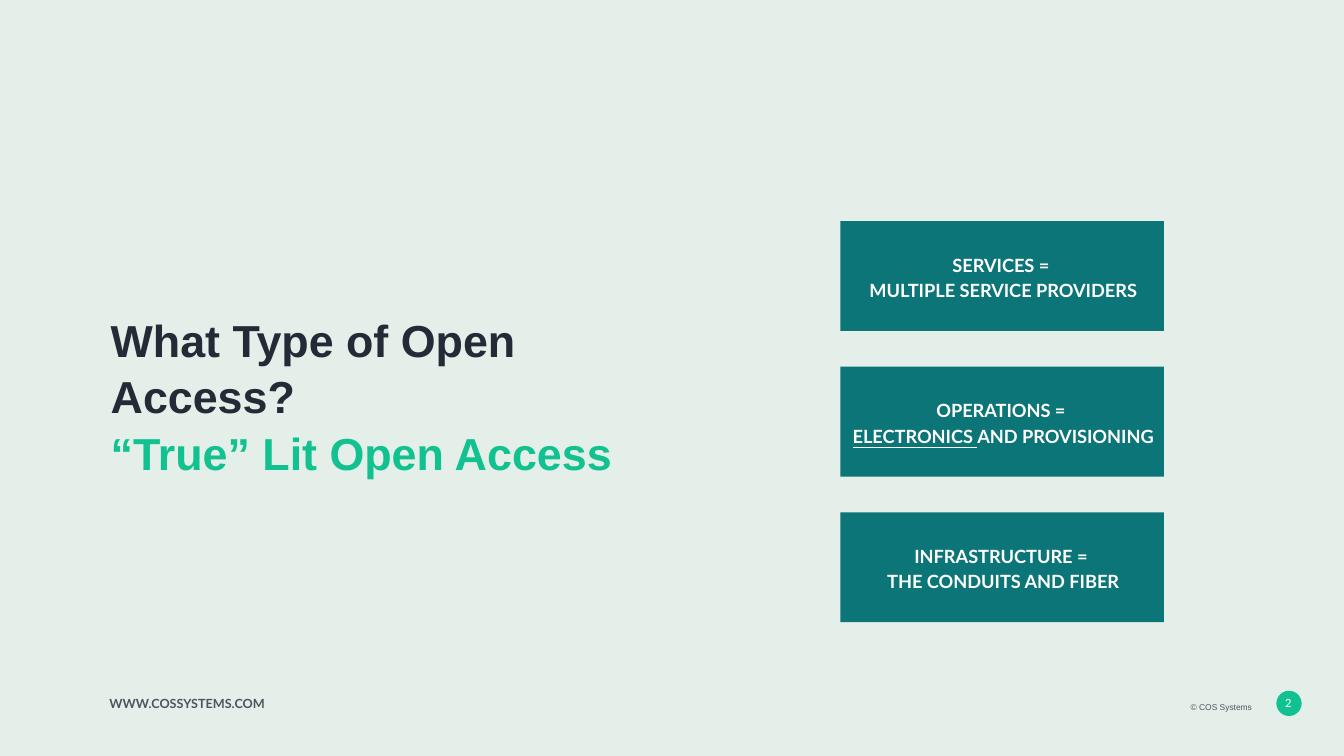
from pptx import Presentation
from pptx.dml.color import RGBColor
from pptx.enum.shapes import MSO_SHAPE as Shape
from pptx.enum.text import MSO_ANCHOR as Anchor, PP_ALIGN as Align
from pptx.util import Cm, Pt

MINT = RGBColor(0xE4, 0xEF, 0xE9)
GREEN = RGBColor(0x11, 0xC1, 0x8F)
TEAL = RGBColor(0x0C, 0x75, 0x77)
NAVY = RGBColor(0x24, 0x2A, 0x36)
GREY = RGBColor(0x4D, 0x54, 0x60)
WHITE = RGBColor(0xFF, 0xFF, 0xFF)

LAYER_LEFT, LAYER_TOP, LAYER_STEP = 21.18, 5.57, 3.67
LAYERS = [
    ("SERVICES = ", [("MULTIPLE SERVICE PROVIDERS", False)]),
    ("OPERATIONS = ", [("ELECTRONICS ", True), ("AND PROVISIONING", False)]),
    ("INFRASTRUCTURE = ", [("THE CONDUITS AND FIBER", False)]),
]


def style(paragraph, font_name, size, color, bold=False, align=Align.LEFT, spacing=1.0):
    paragraph.alignment = align
    paragraph.line_spacing = spacing
    font = paragraph.font
    font.name, font.size, font.bold = font_name, Pt(size), bold
    font.color.rgb = color


def add_text(slide, box, text, *font, anchor=Anchor.TOP, **options):
    frame = slide.shapes.add_textbox(*map(Cm, box)).text_frame
    frame.word_wrap = True
    frame.vertical_anchor = anchor
    paragraph = frame.paragraphs[0]
    paragraph.text = text
    style(paragraph, *font, **options)
    return paragraph


def add_filled_shape(slide, kind, box, color):
    shape = slide.shapes.add_shape(kind, *map(Cm, box))
    shape.shadow.inherit = False
    shape.fill.solid()
    shape.fill.fore_color.rgb = color
    shape.line.fill.background()
    return shape


def add_layer(slide, top, heading, parts):
    shape = add_filled_shape(slide, Shape.RECTANGLE, (LAYER_LEFT, top, 8.15, 2.77), TEAL)
    frame = shape.text_frame
    frame.word_wrap = True
    frame.vertical_anchor = Anchor.MIDDLE
    frame.margin_left = frame.margin_right = Cm(0.25)
    frame.margin_top = frame.margin_bottom = Cm(0.25)
    frame.text = heading
    detail = frame.add_paragraph()
    for text, underlined in parts:
        run = detail.add_run()
        run.text = text
        run.font.underline = underlined
    for paragraph in frame.paragraphs:
        paragraph._p.get_or_add_pPr().set("marL", str(Cm(0.05)))
        style(paragraph, "Lato", 13, WHITE, bold=True, align=Align.CENTER, spacing=1.15)


def add_title(slide):
    paragraph = add_text(slide, (2.54, 7.67, 14.63, 4.55), "What Type of Open Access?",
                         "Arial", 32, NAVY, bold=True, spacing=1.05, anchor=Anchor.MIDDLE)
    paragraph.add_line_break()
    run = paragraph.add_run()
    run.text = "“True” Lit Open Access"
    run.font.color.rgb = GREEN


def add_footer(slide):
    badge = add_filled_shape(slide, Shape.OVAL, (32.18, 17.42, 0.61, 0.61), GREEN)
    badge.line.color.rgb = GREEN
    badge.line.width = Pt(0.75)
    add_text(slide, (31.67, 17.2, 1.6, 1.04), "2", "Lato", 8, WHITE,
             align=Align.CENTER, anchor=Anchor.MIDDLE)
    add_text(slide, (20.85, 17.53, 10.95, 0.51), "© COS Systems", "Arial", 6, GREY,
             align=Align.RIGHT, spacing=1.15)
    add_text(slide, (2.51, 17.42, 9.37, 0.64), "WWW.COSSYSTEMS.COM", "Lato", 9, GREY, bold=True)


def main():
    presentation = Presentation()
    presentation.slide_width, presentation.slide_height = Cm(33.87), Cm(19.05)
    slide = presentation.slides.add_slide(presentation.slide_layouts[6])
    slide.background.fill.solid()
    slide.background.fill.fore_color.rgb = MINT
    add_footer(slide)
    add_title(slide)
    for index, (heading, parts) in enumerate(LAYERS):
        add_layer(slide, LAYER_TOP + index * LAYER_STEP, heading, parts)
    presentation.save("out.pptx")


if __name__ == "__main__":
    main()
